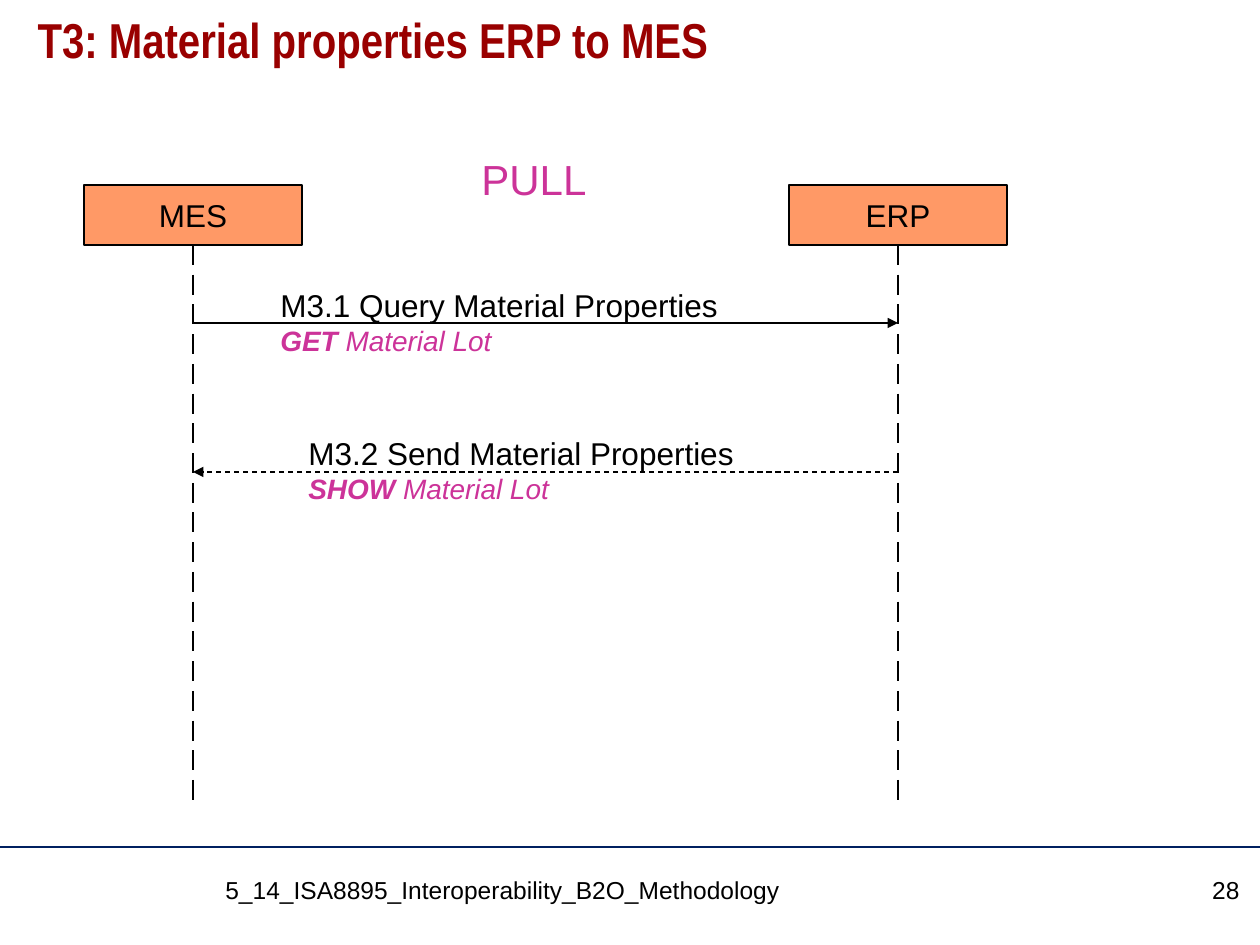
from pptx import Presentation
from pptx.dml.color import RGBColor
from pptx.enum.dml import MSO_LINE
from pptx.enum.shapes import MSO_CONNECTOR, MSO_SHAPE
from pptx.enum.text import MSO_ANCHOR, MSO_AUTO_SIZE, PP_ALIGN
from pptx.util import Emu, Pt
from lxml.etree import SubElement

PX = 914400 / 126
NS = "{http://schemas.openxmlformats.org/drawingml/2006/main}"
BLACK, PINK, ORANGE, RED, NAVY = "000000", "CC3399", "FF9966", "990000", "002060"

TITLE = "T3: Material properties ERP to MES"
ACTORS = [("MES", 193), ("ERP", 898)]
# heading, verb, object, text box, margin and indent, arrow start, end and height, dashed
CALLS = [
    ("M3.1 Query Material Properties", "GET ", "Material Lot",
     (205, 280, 530, 84), (63, 0), (193, 898, 323), False),
    ("M3.2 Send Material Properties", "SHOW ", "Material Lot",
     (233, 428, 518, 84), (126, -63), (898, 193, 472), True),
]
# text, box, size, colour, alignment, wrap
LABELS = [
    ("PULL", (469, 147, 131, 63), 24, PINK, PP_ALIGN.LEFT, False),
    ("5_14_ISA8895_Interoperability_B2O_Methodology",
     (213, 869, 908, 57), 14, BLACK, PP_ALIGN.LEFT, True),
    ("28", (1136, 869, 116, 57), 14, BLACK, PP_ALIGN.RIGHT, True),
]
HEAD_TOP, HEAD_W, HEAD_H = 185, 218, 60
LIFE_END, DASHES, DASH = 800, 19, 20


def px(*nums):
    return [Emu(round(n * PX)) for n in nums]


def color(text):
    return RGBColor.from_string(text)


def style(para, size, tone=BLACK, face="Arial", **flags):
    font = para.font
    font.size, font.name = Pt(size), face
    font.color.rgb = color(tone)
    for name, value in flags.items():
        setattr(font, name, value)


def line(shapes, x1, y1, x2, y2, tone=BLACK, arrow=False, dashed=False):
    link = shapes.add_connector(MSO_CONNECTOR.STRAIGHT, *px(x1, y1, x2, y2))
    link.line.color.rgb = color(tone)
    link.line.width = Pt(0.75)
    if dashed:
        link.line.dash_style = MSO_LINE.DASH
    if arrow:
        SubElement(link.line._get_or_add_ln(), NS + "tailEnd", type="triangle")
    SubElement(link._element.spPr, NS + "effectLst")


def textbox(shapes, box, wrap):
    frame = shapes.add_textbox(*px(*box)).text_frame
    frame.word_wrap = wrap
    if not wrap:
        frame.auto_size = MSO_AUTO_SIZE.SHAPE_TO_FIT_TEXT
    return frame


def actor(shapes, name, mid):
    """Draw a head box with its broken lifeline below."""
    head = shapes.add_shape(
        MSO_SHAPE.RECTANGLE, *px(mid - HEAD_W / 2, HEAD_TOP, HEAD_W, HEAD_H))
    head.shadow.inherit = False
    head.fill.solid()
    head.fill.fore_color.rgb = color(ORANGE)
    head.line.color.rgb = color(BLACK)
    head.line.width = Pt(0.75)
    frame = head.text_frame
    frame.word_wrap = False
    frame.vertical_anchor = MSO_ANCHOR.MIDDLE
    para = frame.paragraphs[0]
    para.text, para.alignment = name, PP_ALIGN.CENTER
    style(para, 18)

    life = shapes.add_group_shape().shapes
    start = HEAD_TOP + HEAD_H
    step = (LIFE_END - DASH - start) / (DASHES - 1)
    for i in range(DASHES):
        top = start + i * step
        line(life, mid, top, mid, top + DASH)


def call(shapes, head, verb, noun, box, inset, ends, dashed):
    x1, x2, y = ends
    line(shapes, x1, y, x2, y, arrow=True, dashed=dashed)
    frame = textbox(shapes, box, False)
    first, second = frame.paragraphs[0], frame.add_paragraph()
    margin, indent = px(*inset)
    for para in (first, second):
        props = para._p.get_or_add_pPr()
        props.set("marL", str(margin))
        props.set("indent", str(indent))
    first.text = head
    style(first, 18)
    for text, bold in ((verb, True), (noun, False)):
        run = second.add_run()
        run.text, run.font.bold = text, bold
    style(second, 16, PINK, italic=True)


def main():
    deck = Presentation()
    deck.slide_width, deck.slide_height = px(1260, 945)
    slide = deck.slides.add_slide(deck.slide_layouts[5])
    shapes = slide.shapes

    title = shapes.title
    title.left, title.top, title.width, title.height = px(25, 10, 1211, 105)
    frame = title.text_frame
    frame.auto_size = MSO_AUTO_SIZE.NONE
    frame.vertical_anchor = MSO_ANCHOR.TOP
    para = frame.paragraphs[0]
    para.text, para.alignment, para.line_spacing = TITLE, PP_ALIGN.LEFT, 0.9
    style(para, 28, RED, "Arial Narrow", bold=True)

    line(shapes, 0, 847, 1260, 847, NAVY)
    for name, mid in ACTORS:
        actor(shapes, name, mid)
    for item in CALLS:
        call(shapes, *item)
    for text, box, size, tone, align, wrap in LABELS:
        para = textbox(shapes, box, wrap).paragraphs[0]
        para.text, para.alignment = text, align
        style(para, size, tone)

    deck.save("out.pptx")


if __name__ == "__main__":
    main()
